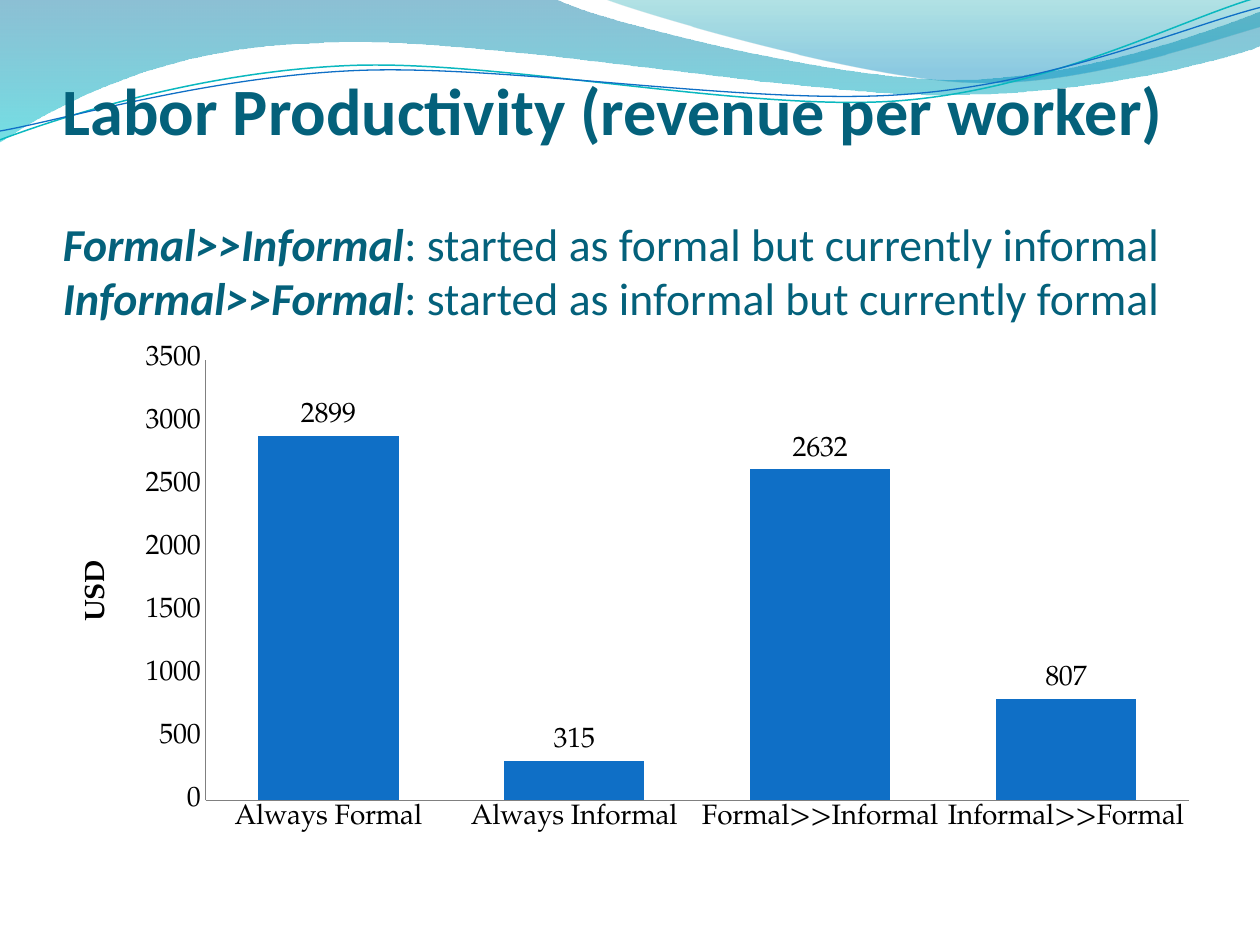
import math

from lxml import etree
from pptx import Presentation
from pptx import util as u
from pptx.chart.data import CategoryChartData
from pptx.dml.color import RGBColor
from pptx.enum import chart as ch, text
from pptx.oxml import parse_xml
from pptx.oxml.ns import nsdecls, qn

INK, TEAL, BLUE = "04617B", "0AB8BF", "0F6FC6"
HEAD_FONT, CHART_FONT = "Calibri", "TeX Gyre Pagella"


def rgb(value):
    return RGBColor.from_string(value)


def style(font, name=CHART_FONT, size=16, color="000000", bold=False, italic=False):
    font.name, font.size = name, u.Pt(size)
    font.bold, font.italic = bold, italic
    font.color.rgb = rgb(color)


def add_run(p, value, **fmt):
    r = p.add_run()
    r.text = value
    style(r.font, **fmt)


def turn(point, center, degrees):
    a = math.radians(degrees)
    dx, dy = point[0] - center[0], point[1] - center[1]
    return (center[0] + dx * math.cos(a) - dy * math.sin(a),
            center[1] + dx * math.sin(a) + dy * math.cos(a))


def set_layout(parent, inner=False, **box):
    """Place a chart part by fractions of the chart area."""
    layout = parent.find(qn("c:layout"))
    if layout is None:
        layout = etree.Element(qn("c:layout"))
        parent.insert(1 if parent.tag == qn("c:title") else 0, layout)
    for child in list(layout):
        layout.remove(child)
    target = '<c:layoutTarget val="inner"/>' if inner else ""
    modes = '<c:xMode val="edge"/><c:yMode val="edge"/>'
    values = "".join(f'<c:{k} val="{v}"/>' for k, v in box.items())
    layout.append(parse_xml(f'<c:manualLayout {nsdecls("c")}>{target}{modes}{values}</c:manualLayout>'))


class Deck:
    def __init__(self, width, height):
        self.prs = Presentation()
        self.prs.slide_width, self.prs.slide_height = u.Inches(width), u.Inches(height)
        self.s = self.prs.slides.add_slide(self.prs.slide_layouts[6])

    def outline(self, start, steps, close):
        """Draw steps of one point as lines and of three points as cubic curves."""
        pts = [(u.Inches(x), u.Inches(y)) for step in steps for x, y in step]
        builder = self.s.shapes.build_freeform(*map(u.Inches, start))
        builder.add_line_segments(pts, close=close)
        sp = builder.convert_to_shape()
        sp.shadow.inherit = False
        lines = iter(list(sp.element.spPr.iter(qn("a:lnTo"))))
        for step in steps:
            nodes = [next(lines) for _ in step]
            if len(nodes) == 3:
                curve = etree.Element(qn("a:cubicBezTo"))
                nodes[0].addprevious(curve)
                for node in nodes:
                    curve.append(node[0])
                    node.getparent().remove(node)
        return sp

    def wave(self, start, steps, stops):
        sp = self.outline(start, steps, True)
        sp.line.fill.background()
        sp.fill.gradient()
        sp.fill.gradient_angle = 270
        for stop, (pos, color, alpha) in zip(sp.fill.gradient_stops, stops):
            stop.position = pos
            stop.color.rgb = rgb(color)
        clrs = sp.element.spPr.iter(qn("a:srgbClr"))
        for clr, (pos, color, alpha) in zip(clrs, stops):
            etree.SubElement(clr, qn("a:alpha")).set("val", str(alpha * 1000))

    def strand(self, start, steps, center, color, width, tilt=-2.7):
        level = [[turn(pt, center, -tilt) for pt in step] for step in steps]
        sp = self.outline(turn(start, center, -tilt), level, False)
        sp.rotation = tilt
        sp.fill.background()
        sp.line.color.rgb = rgb(color)
        sp.line.width = u.Pt(width)

    def heading(self, box, title, notes):
        tf = self.s.shapes.add_textbox(*map(u.Inches, box)).text_frame
        tf.word_wrap = True
        tf.vertical_anchor = text.MSO_ANCHOR.BOTTOM
        tf.margin_left = tf.margin_right = tf.margin_bottom = 0
        p = tf.paragraphs[0]
        p.space_after = u.Pt(38)
        add_run(p, title, name=HEAD_FONT, size=37.8, color=INK, bold=True)
        for term, meaning in notes:
            p = tf.add_paragraph()
            add_run(p, term, name=HEAD_FONT, size=26.1, color=INK, bold=True, italic=True)
            add_run(p, meaning, name=HEAD_FONT, size=26.1, color=INK)

    def columns(self, box, values, unit):
        data = CategoryChartData(number_format="0")
        data.categories = list(values)
        data.add_series("Series 1", list(values.values()))
        chart = self.s.shapes.add_chart(
            ch.XL_CHART_TYPE.COLUMN_CLUSTERED, *map(u.Inches, box), data).chart
        chart.has_legend = chart.has_title = False
        style(chart.font, size=10)

        # Bars and their labels
        plot = chart.plots[0]
        plot.gap_width, plot.vary_by_categories = 75, False
        fill = plot.series[0].format.fill
        fill.solid()
        fill.fore_color.rgb = rgb(BLUE)
        labels = plot.series[0].data_labels
        labels.show_value = True
        labels.position = ch.XL_LABEL_POSITION.OUTSIDE_END
        labels.number_format, labels.number_format_is_linked = "0", False
        style(labels.font)

        # Axes
        for axis in (chart.category_axis, chart.value_axis):
            axis.has_major_gridlines = False
            axis.major_tick_mark = axis.minor_tick_mark = ch.XL_TICK_MARK.NONE
            axis.format.line.color.rgb = rgb("808080")
            axis.format.line.width = u.Pt(0.75)
            style(axis.tick_labels.font)
        axis.minimum_scale, axis.maximum_scale, axis.major_unit = 0, 3500, 500
        axis.tick_labels.number_format = "0"
        axis.tick_labels.number_format_is_linked = False
        add_run(axis.axis_title.text_frame.paragraphs[0], unit, bold=True)
        body = axis.axis_title.text_frame._txBody.find(qn("a:bodyPr"))
        body.set("rot", "-5400000")
        body.set("vert", "horz")

        set_layout(axis.axis_title._element, x=0.03, y=0.5)
        set_layout(chart._chartSpace.chart.plotArea, inner=True, x=0.142, y=0.167, w=0.851, h=0.75)


def main():
    deck = Deck(10, 7.5)

    # Waves along the top edge
    deck.wave((0, 0), [
        [(4.4, -0.01)],
        [(4.76, 0.17), (6.64, 0.63), (7.58, 0.63)],
        [(8.53, 0.63), (9.58, 0.26), (10, 0.09)],
        [(10.01, 0.36)],
        [(9.83, 0.44), (8.7, 0.76), (7.46, 0.75)],
        [(6.22, 0.75), (3.82, 0.28), (2.57, 0.34)],
        [(1.29, 0.36), (0.46, 0.83), (-0.01, 1.13)],
    ], [(0, "0074A1", 45), (1, "00C6CF", 55)])
    deck.wave((4.79, -0.01), [
        [(5.09, 0.11), (6.82, 0.62), (7.69, 0.65)],
        [(8.56, 0.69), (9.61, 0.32), (10, 0.21)],
        [(10, 0)],
    ], [(0, "00A1A9", 30), (0.8, "008BBF", 45)])

    # Thin tilted strands over the waves
    deck.strand((0, 1.11), [
        [(0.48, 0.93), (1.58, 0.57), (2.77, 0.52)],
        [(3.95, 0.47), (5.93, 0.89), (7.13, 0.8)],
        [(8.33, 0.71), (9.38, 0.15), (9.98, -0.02)],
    ], (4.99, 0.58), TEAL, 0.85)
    deck.strand((0, 1.04), [
        [(0.47, 0.96), (1.64, 0.61), (2.83, 0.56)],
        [(4.03, 0.51), (5.97, 0.84), (7.17, 0.75)],
        [(8.36, 0.67), (9.41, 0.21), (10, 0.06)],
    ], (5, 0.59), BLUE, 0.75)

    # Title with the two definitions
    deck.heading((0.5, 0.25, 9, 2.33), "Labor Productivity (revenue per worker)", [
        ("Formal>>Informal", ": started as formal but currently informal"),
        ("Informal>>Formal", ": started as informal but currently formal"),
    ])

    # Revenue per worker by group
    deck.columns((0.33, 2.08, 9.17, 4.66), {
        "Always Formal": 2899,
        "Always Informal": 315,
        "Formal>>Informal": 2632,
        "Informal>>Formal": 807,
    }, "USD")

    deck.prs.save("out.pptx")


if __name__ == "__main__":
    main()
